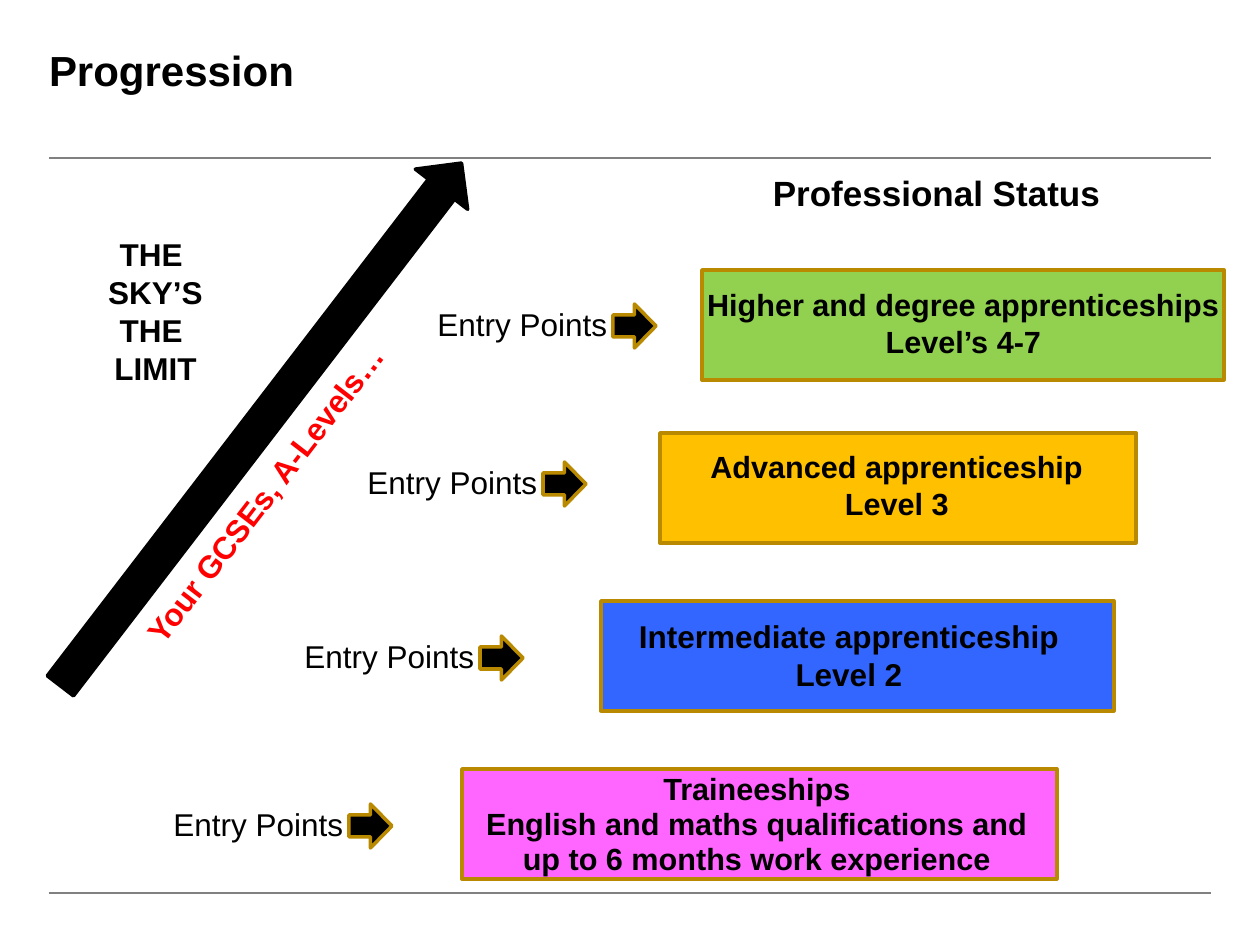
from pptx import Presentation, util as u
from pptx.dml.color import RGBColor
from pptx.enum import shapes, text
from pptx.oxml import ns
from lxml import etree

PX = 914400 // 126
GOLD = "B98A00"
KIND = shapes.MSO_SHAPE
MID = text.PP_ALIGN.CENTER
LEFT = text.PP_ALIGN.LEFT

ROWS = [
    ((702, 270, 522, 110), (-29, 10, 581, 87), (425, 299), "92D050", 17.5, None,
     ["Higher and degree apprenticeships", "Level’s 4-7"]),
    ((660, 433, 476, 110), (9, 9, 456, 89), (355, 457), "FFC000", 17.5, None,
     ["Advanced apprenticeship", "Level 3"]),
    ((601, 601, 513, 110), (-30, 10, 556, 90), (292, 631), "3366FF", 18, None,
     ["Intermediate apprenticeship", "Level 2"]),
    ((462, 769, 595, 110), (9, -4, 572, 118), (161, 799), "FF66FF", 17.5, 20,
     ["Traineeships",
      "English and maths qualifications and up to 6 months work experience"]),
]


def emu(box):
    return [u.Emu(n * PX) for n in box]


def tint(code):
    return RGBColor.from_string(code)


def put(frame, lines, size, bold=True, align=MID, color="000000", lead=None):
    frame.word_wrap = True
    frame.vertical_anchor = text.MSO_ANCHOR.TOP
    look = {"name": "Arial", "size": u.Pt(size), "bold": bold}
    for i, line in enumerate(lines):
        para = frame.paragraphs[0] if i == 0 else frame.add_paragraph()
        para.alignment = align
        if lead:
            para.line_spacing = u.Pt(lead)
        run = para.add_run()
        run.text = line
        for key, val in look.items():
            setattr(run.font, key, val)
        run.font.color.rgb = tint(color)


def label(home, box, lines, size, turn=0, **opts):
    item = home.add_textbox(*emu(box))
    item.rotation = turn
    put(item.text_frame, lines, size, **opts)


def block(home, kind, box, fill, edge, turn=0):
    item = home.add_shape(kind, *emu(box))
    item.shadow.inherit = False
    item.rotation = turn
    item.fill.solid()
    item.fill.fore_color.rgb = tint(fill)
    item.line.color.rgb = tint(edge)
    item.line.width = u.Pt(2)


def rule(home, left, right, top):
    line = home.add_connector(shapes.MSO_CONNECTOR.STRAIGHT,
                              *emu((left, top, right, top)))
    line.line.color.rgb = tint("808080")
    line.line.width = u.Pt(1)
    etree.SubElement(line._element.spPr, ns.qn("a:effectLst"))


def head(slide, box):
    title = slide.shapes.title
    title.left, title.top, title.width, title.height = emu(box)
    frame = title.text_frame
    for side in ("left", "top", "right", "bottom"):
        setattr(frame, "margin_" + side, 0)
    put(frame, ["Progression"], 24, align=LEFT, lead=26)


def climb(home, box):
    x, y, w, h = box
    block(home, KIND.UP_ARROW, (x + 179, y, 66, 659), "000000", "000000", 37.5)
    label(home, (x + 45, y + 134, 123, 165),
          ["THE ", "SKY’S ", "THE ", "LIMIT"], 18)
    label(home, (x + 17, y + 366, 408, 50), ["Your GCSEs, A-Levels…"], 18,
          turn=307.5, align=LEFT, color="FF0000")


def stage(home, box, inner, entry, fill, size, lead, lines):
    group = home.add_group_shape().shapes
    block(group, KIND.RECTANGLE, box, fill, GOLD)
    dx, dy, w, h = inner
    label(group, (box[0] + dx, box[1] + dy, w, h), lines, size, lead=lead)
    x, y = entry
    label(home, (x, y, 218, 50), ["Entry Points"], 18, bold=False, align=LEFT)
    block(home, KIND.RIGHT_ARROW, (x + 188, y + 5, 43, 44), "000000", GOLD)


def main():
    deck = Presentation()
    deck.slide_width, deck.slide_height = emu((1260, 945))
    slide = deck.slides.add_slide(deck.slide_layouts[5])
    home = slide.shapes
    for top in (158, 893):
        rule(home, 49, 1211, top)
    head(slide, (49, 49, 866, 108))
    climb(home, (49, 95, 425, 659))
    label(home, (755, 165, 363, 55), ["Professional Status"], 20)
    for row in ROWS:
        stage(home, *row)
    deck.save("out.pptx")


if __name__ == "__main__":
    main()
